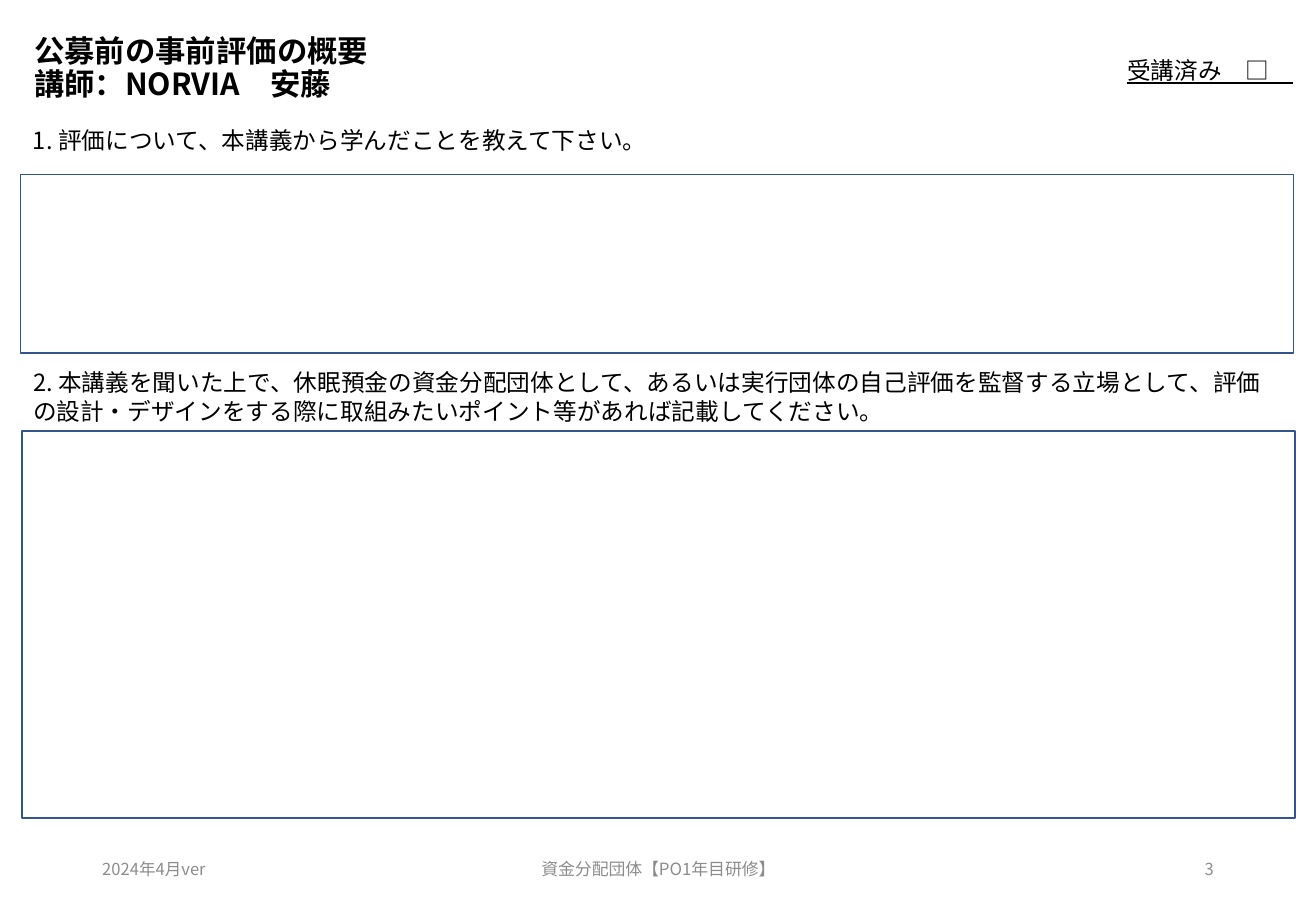
from lxml.etree import SubElement
from pptx import Presentation
from pptx.dml.color import RGBColor
from pptx.enum.shapes import MSO_SHAPE as SHAPE
from pptx.enum.text import MSO_ANCHOR as ANCHOR, MSO_AUTO_SIZE as AUTO, PP_ALIGN as ALIGN
from pptx.oxml.ns import qn
from pptx.util import Pt

FONT = "Noto Sans CJK JP"
BLACK = RGBColor(0x00, 0x00, 0x00)
WHITE = RGBColor(0xFF, 0xFF, 0xFF)
BLUE = RGBColor(0x32, 0x54, 0x91)
GRAY = RGBColor(0x8C, 0x8C, 0x8C)


def place(sp, left, top, width, height):
    sp.left, sp.top, sp.width, sp.height = Pt(left), Pt(top), Pt(width), Pt(height)


def write(sp, text, size, color=BLACK, align=ALIGN.LEFT, anchor=ANCHOR.TOP):
    """Fill the shape with one paragraph and return that paragraph."""
    tf = sp.text_frame
    tf.word_wrap = True
    tf.auto_size = AUTO.NONE
    tf.vertical_anchor = anchor
    p = tf.paragraphs[0]
    p.text = text
    p.alignment = align
    p.font.size = Pt(size)
    p.font.color.rgb = color
    p.font.name = FONT
    # Japanese glyphs take their typeface from a:ea
    SubElement(p._p.pPr.find(qn("a:defRPr")), qn("a:ea"), typeface=FONT)
    return p


def add_title(s, text):
    sp = s.shapes.title
    place(sp, 13, 10, 672.5, 62)
    p = write(sp, text, 18, anchor=ANCHOR.MIDDLE)
    p.font.bold = True
    p.line_spacing = 0.9


def add_text(s, box, text, size=14, **style):
    sp = s.shapes.add_textbox(0, 0, 0, 0)
    place(sp, *box)
    return write(sp, text, size, **style)


def add_answer_box(s, *box):
    sp = s.shapes.add_shape(SHAPE.RECTANGLE, 0, 0, 0, 0)
    place(sp, *box)
    sp.shadow.inherit = False
    sp.fill.solid()
    sp.fill.fore_color.rgb = WHITE
    sp.line.color.rgb = BLUE
    sp.line.width = Pt(1)


def add_footer(s, left, width, text, size, align):
    add_text(s, (left, 500.5, width, 28.75), text, size,
             color=GRAY, align=align, anchor=ANCHOR.MIDDLE)


def main():
    prs = Presentation()
    prs.slide_width, prs.slide_height = Pt(780), Pt(540)
    s = prs.slides.add_slide(prs.slide_layouts[5])

    add_title(s, "公募前の事前評価の概要\v講師：NORVIA　安藤")
    attended = add_text(s, (661, 29.5, 118, 24.25), "受講済み　□　")
    attended.font.underline = True

    add_text(s, (12.5, 71.25, 748, 24.25),
             "1.\u00a0評価について、本講義から学んだことを教えて下さい。")
    add_answer_box(s, 12.25, 103.5, 754.5, 105.75)
    add_text(s, (12.5, 214.75, 754.5, 41.25),
             "2.\u00a0本講義を聞いた上で、休眠預金の資金分配団体として、"
             "あるいは実行団体の自己評価を監督する立場として、"
             "評価の設計・デザインをする際に取組みたいポイント等があれば記載してください。")
    add_answer_box(s, 13, 255.5, 754.5, 229.5)

    add_footer(s, 53.5, 175.5, "2024年4月ver", 9.8, ALIGN.LEFT)
    add_footer(s, 258.5, 263.5, "資金分配団体【PO1年目研修】", 10, ALIGN.CENTER)
    add_footer(s, 551, 175.5, "3", 9.8, ALIGN.RIGHT)

    prs.save("out.pptx")


if __name__ == "__main__":
    main()
